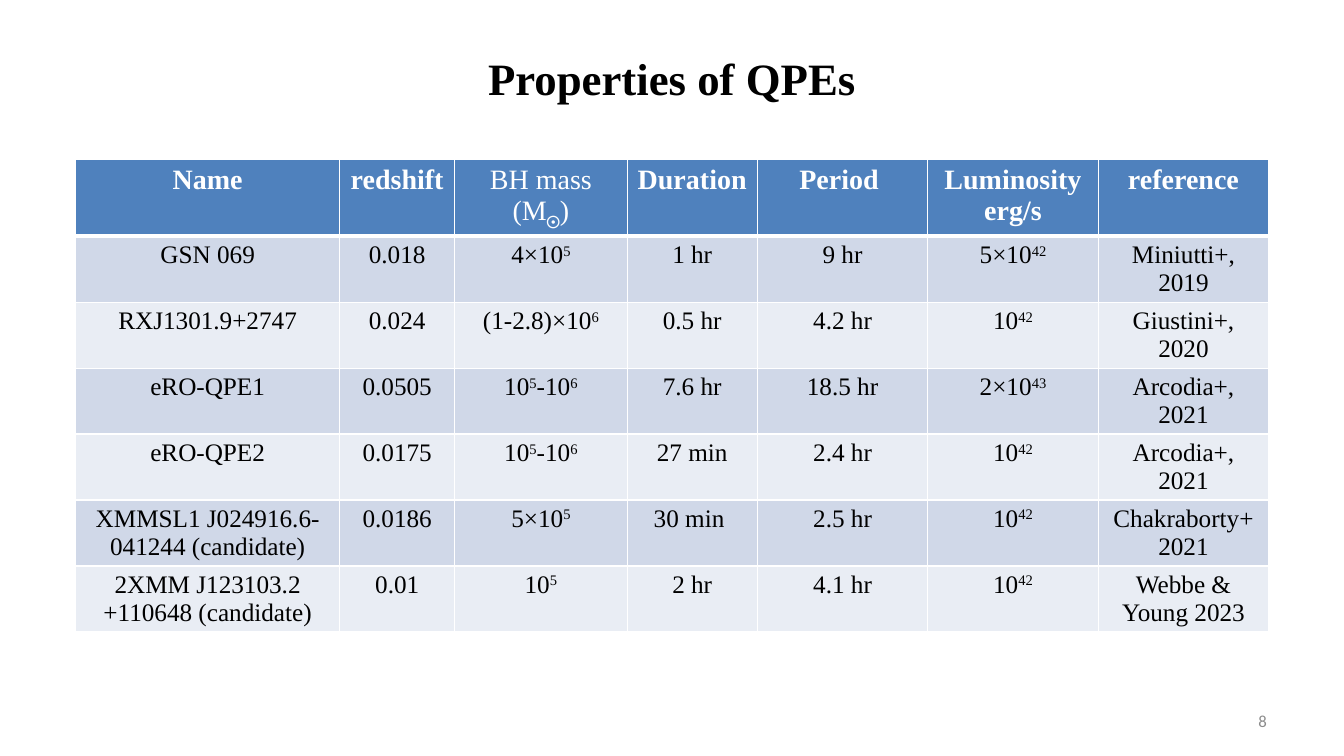
from lxml import etree
from pptx import Presentation
from pptx.dml.color import RGBColor
from pptx.enum.text import MSO_ANCHOR, PP_ALIGN
from pptx.oxml.ns import qn
from pptx.util import Pt

CENTER, RIGHT = PP_ALIGN.CENTER, PP_ALIGN.RIGHT
MIDDLE = MSO_ANCHOR.MIDDLE

WHITE = RGBColor(0xFF, 0xFF, 0xFF)
BLACK = RGBColor(0, 0, 0)
GRAY = RGBColor(0x8C, 0x8C, 0x8C)
BLUE = RGBColor(0x4F, 0x81, 0xBD)
BANDS = (RGBColor(0xD0, 0xD8, 0xE8), RGBColor(0xE9, 0xED, 0xF4))
SERIF = "Times New Roman"

# Content: ^ encloses a raised part, or the lowered sun sign; \n parts paragraphs
TITLE = "Properties of QPEs"
NUMBER = "8"
MASS = 2
ROWS = [
    ("Name", "redshift", "BH mass (M^☉^)", "Duration ", "Period ",
     "Luminosity\nerg/s", "reference"),
    ("GSN 069", "0.018", "4×10^5^", "1 hr", "9 hr", "5×10^42^",
     "Miniutti+, 2019"),
    ("RXJ1301.9+2747", "0.024", "(1-2.8)×10^6^", "0.5 hr", "4.2 hr",
     "10^42^", "Giustini+, 2020"),
    ("eRO-QPE1", "0.0505", "10^5^-10^6^", "7.6 hr", "18.5 hr",
     "2×10^43^", "Arcodia+,\n2021"),
    ("eRO-QPE2", "0.0175", "10^5^-10^6^", "27 min", "2.4 hr",
     "10^42^", "Arcodia+,\n2021"),
    ("XMMSL1 J024916.6-\n041244 (candidate)", "0.0186", "5×10^5^",
     "30 min ", "2.5 hr", "10^42^", "Chakraborty+ 2021"),
    ("2XMM J123103.2 +110648 (candidate)", "0.01", "10^5^", "2 hr",
     "4.1 hr", "10^42^", "Webbe & Young 2023"),
]
WIDTHS = (188.7, 82.1, 123.2, 93, 121.8, 121.8, 121.8)
HEIGHT = 29.5


def style(para, size, color, bold=False, font=SERIF, align=CENTER):
    para.alignment = align
    para.font.name, para.font.size = font, Pt(size)
    para.font.bold = bold
    para.font.color.rgb = color


def write(para, text):
    for i, part in enumerate(text.split("^")):
        if not part:
            continue
        run = para.add_run()
        run.text = part
        if i % 2:
            sun = part == "☉"
            shift = "-25000" if sun else "30000"
            run._r.get_or_add_rPr().set("baseline", shift)
            if sun:
                run.font.bold = True


def border(cell, top, bottom):
    props = cell._tc.get_or_add_tcPr()
    for side, width in (("L", 1), ("R", 1), ("T", top), ("B", bottom)):
        line = etree.SubElement(props, qn(f"a:ln{side}"), w=str(Pt(width)))
        fill = etree.SubElement(line, qn("a:solidFill"))
        etree.SubElement(fill, qn("a:srgbClr"), val=str(WHITE))


deck = Presentation()
deck.slide_width, deck.slide_height = Pt(960), Pt(540)
slide = deck.slides.add_slide(deck.slide_layouts[5])

# Title
title = slide.shapes.title
title.left, title.top = Pt(48), Pt(25)
title.width, title.height = Pt(864), Pt(60.5)
title.text_frame.text = TITLE
title.text_frame.vertical_anchor = MIDDLE
style(title.text_frame.paragraphs[0], 32, BLACK, True)

# Table
table = slide.shapes.add_table(
    len(ROWS), len(WIDTHS), Pt(54), Pt(114),
    Pt(sum(WIDTHS)), Pt(HEIGHT * len(ROWS))).table
for col, width in zip(table.columns, WIDTHS):
    col.width = Pt(width)
for r, row in enumerate(ROWS):
    table.rows[r].height = Pt(HEIGHT)
    head = r == 0
    for c, text in enumerate(row):
        cell = table.cell(r, c)
        border(cell, 3 if r == 1 else 1, 3 if head else 1)
        cell.fill.solid()
        cell.fill.fore_color.rgb = BLUE if head else BANDS[(r - 1) % 2]
        frame = cell.text_frame
        for i, line in enumerate(text.split("\n")):
            para = frame.add_paragraph() if i else frame.paragraphs[0]
            style(para, 20 if head else 18, WHITE if head else BLACK,
                  head and c != MASS)
            write(para, line)

# Slide number
box = slide.shapes.add_textbox(Pt(688), Pt(500.5), Pt(224), Pt(28.75))
frame = box.text_frame
frame.word_wrap = True
frame.vertical_anchor = MIDDLE
frame.text = NUMBER
style(frame.paragraphs[0], 12, GRAY, font="Calibri", align=RIGHT)

deck.save("out.pptx")
